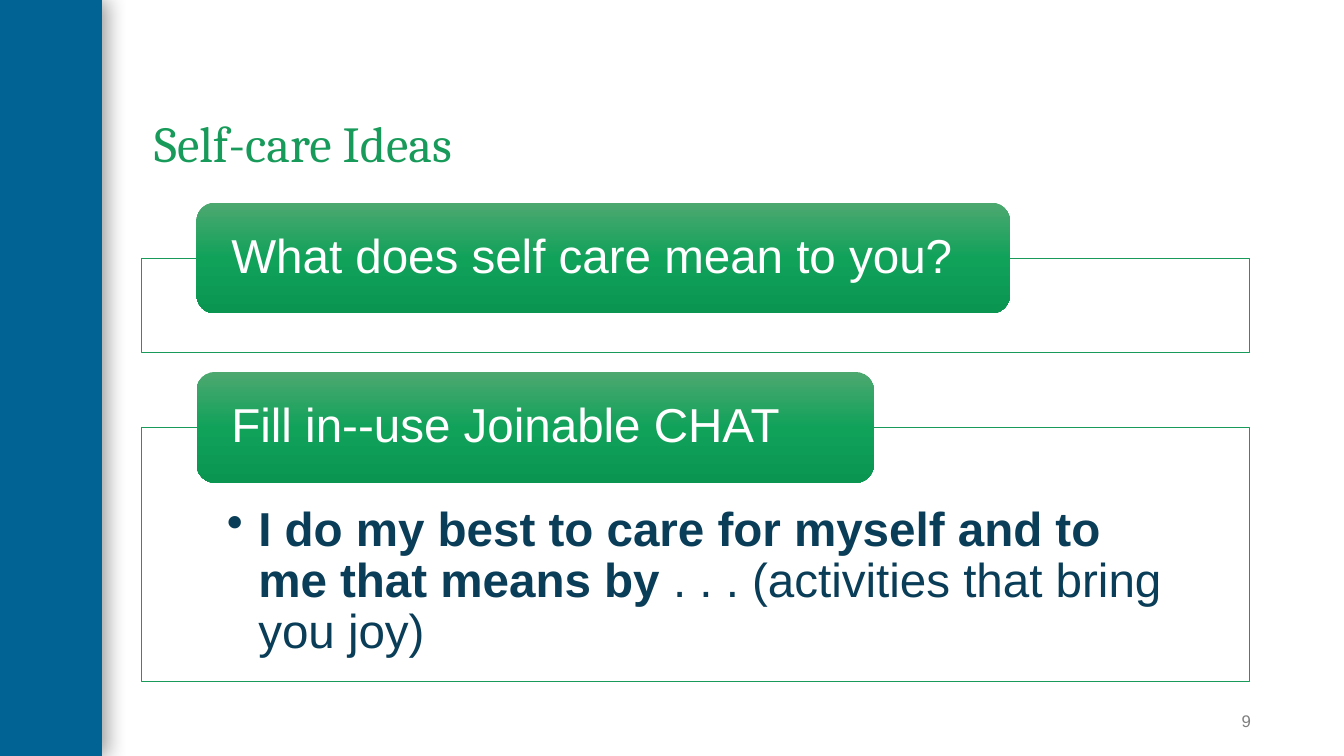
from copy import deepcopy
from dataclasses import dataclass

from lxml.etree import SubElement
from pptx import Presentation
from pptx.dml.color import RGBColor
from pptx.enum.shapes import MSO_SHAPE
from pptx.enum.text import MSO_ANCHOR, PP_ALIGN
from pptx.oxml.ns import qn
from pptx.shapes.autoshape import Shape
from pptx.slide import Slide
from pptx.text.text import TextFrame, _Paragraph
from pptx.util import Pt

COLORS = {
    "sidebar": "006393", "green": "189B5A", "white": "FFFFFF",
    "body": "0A3D57", "number": "7F7F7F", "shadow": "000000",
}
HEADER_GRADIENT = [(0, "4DA870"), (0.5, "11A25A"), (1, "0A9550")]
FRAME_LEFT, FRAME_WIDTH = 100.8, 792
HEADER_LEFT, HEADER_HEIGHT = 140.4, 79.2
FIRST_HEADER_TOP, SECTION_GAP = 144.72, 13.68


@dataclass
class Section:
    heading: str
    header_width: float
    frame_height: float
    bullet_runs: tuple[tuple[str, bool], ...] = ()


SECTIONS = [
    Section("What does self care mean to you?", 581.04, 67.68),
    Section("Fill in--use Joinable CHAT", 483.84, 181.44, (
        ("I do my best to care for myself and to me that means by", True),
        (" . . . (activities that bring you joy)", False),
    )),
]


def rgb(name: str) -> RGBColor:
    return RGBColor.from_string(COLORS[name])


def format_frame(frame: TextFrame, anchor: MSO_ANCHOR,
                 insets: tuple[float, float, float, float]) -> None:
    """Set wrapping, anchor and the left, top, right and bottom insets."""
    left, top, right, bottom = insets
    values = {
        "word_wrap": True, "vertical_anchor": anchor,
        "margin_left": Pt(left), "margin_top": Pt(top),
        "margin_right": Pt(right), "margin_bottom": Pt(bottom),
    }
    for name, value in values.items():
        setattr(frame, name, value)


def add_run(paragraph: _Paragraph, text: str, size: float, color: str,
            font: str = "Arial", bold: bool = False) -> None:
    run = paragraph.add_run()
    run.text = text
    for name, value in {"name": font, "size": Pt(size), "bold": bold}.items():
        setattr(run.font, name, value)
    run.font.color.rgb = rgb(color)


def add_panel(slide: Slide, kind: MSO_SHAPE, left: float, top: float,
              width: float, height: float) -> Shape:
    panel = slide.shapes.add_shape(kind, Pt(left), Pt(top), Pt(width), Pt(height))
    panel.shadow.inherit = False
    panel.line.fill.background()
    return panel


def add_sidebar(slide: Slide) -> None:
    sidebar = add_panel(slide, MSO_SHAPE.RECTANGLE, 0, 0, 72.72, 540)
    sidebar.fill.solid()
    sidebar.fill.fore_color.rgb = rgb("sidebar")
    effects = sidebar._element.spPr.find(qn("a:effectLst"))
    shadow = SubElement(effects, qn("a:outerShdw"), blurRad=str(Pt(15)),
                        dist=str(Pt(3)), dir="0", algn="l", rotWithShape="0")
    shade = SubElement(shadow, qn("a:srgbClr"), val=COLORS["shadow"])
    SubElement(shade, qn("a:alpha"), val="40000")


def add_title(slide: Slide) -> None:
    title = slide.shapes.title
    position = {"left": 100.8, "top": 28.8, "width": 791.28, "height": 104.4}
    for name, value in position.items():
        setattr(title, name, Pt(value))
    format_frame(title.text_frame, MSO_ANCHOR.BOTTOM, (9.36,) * 4)
    paragraph = title.text_frame.paragraphs[0]
    paragraph.alignment = PP_ALIGN.LEFT
    paragraph.line_spacing = 0.9
    add_run(paragraph, "Self-care Ideas", 36, "green", "Cambria")


def add_frame(slide: Slide, section: Section, top: float) -> None:
    frame = add_panel(slide, MSO_SHAPE.RECTANGLE, FRAME_LEFT, top,
                      FRAME_WIDTH, section.frame_height)
    frame.fill.solid()
    frame.fill.fore_color.rgb = rgb("white")
    fill_color = frame._element.spPr.find(qn("a:solidFill"))[0]
    SubElement(fill_color, qn("a:alpha"), val="90000")
    frame.line.color.rgb = rgb("green")
    frame.line.width = Pt(0.5)
    if not section.bullet_runs:
        return
    format_frame(frame.text_frame, MSO_ANCHOR.TOP, (61.2, 55.44, 61.2, 18.72))
    paragraph = frame.text_frame.paragraphs[0]
    properties = paragraph._p.get_or_add_pPr()
    properties.set("marL", str(Pt(22.5)))
    properties.set("indent", str(Pt(-22.5)))
    SubElement(properties, qn("a:buChar"), char="•")
    paragraph.alignment = PP_ALIGN.LEFT
    paragraph.line_spacing = 0.9
    for text, bold in section.bullet_runs:
        add_run(paragraph, text, 34, "body", bold=bold)


def fill_header(header: Shape) -> None:
    """Shade the header from top to bottom with three stops."""
    header.fill.gradient()
    header.fill.gradient_angle = 270
    stop_list = header._element.spPr.find(qn("a:gradFill")).find(qn("a:gsLst"))
    stop_list.append(deepcopy(stop_list[0]))
    for stop, (position, color) in zip(header.fill.gradient_stops, HEADER_GRADIENT):
        stop.position = position
        stop.color.rgb = RGBColor.from_string(color)


def add_header(slide: Slide, section: Section, top: float) -> None:
    header = add_panel(slide, MSO_SHAPE.ROUNDED_RECTANGLE, HEADER_LEFT, top,
                       section.header_width, HEADER_HEIGHT)
    fill_header(header)
    format_frame(header.text_frame, MSO_ANCHOR.MIDDLE, (21, 0, 21, 0))
    paragraph = header.text_frame.paragraphs[0]
    paragraph.alignment = PP_ALIGN.LEFT
    paragraph.line_spacing = 0.9
    add_run(paragraph, section.heading, 34, "white")


def add_page_number(slide: Slide) -> None:
    number = slide.shapes.add_textbox(Pt(821.52), Pt(500.4), Pt(72), Pt(28.8))
    format_frame(number.text_frame, MSO_ANCHOR.MIDDLE, (7.2, 3.6, 0, 3.6))
    paragraph = number.text_frame.paragraphs[0]
    paragraph.alignment = PP_ALIGN.RIGHT
    paragraph.space_after = Pt(6)
    add_run(paragraph, "9", 12, "number")


def main() -> None:
    presentation = Presentation()
    presentation.slide_width, presentation.slide_height = Pt(960), Pt(540)
    slide = presentation.slides.add_slide(presentation.slide_layouts[5])
    add_sidebar(slide)
    add_title(slide)
    add_page_number(slide)
    header_top = FIRST_HEADER_TOP
    for section in SECTIONS:
        frame_top = header_top + HEADER_HEIGHT / 2
        add_frame(slide, section, frame_top)
        add_header(slide, section, header_top)
        header_top = frame_top + section.frame_height + SECTION_GAP
    presentation.save("out.pptx")


if __name__ == "__main__":
    main()
